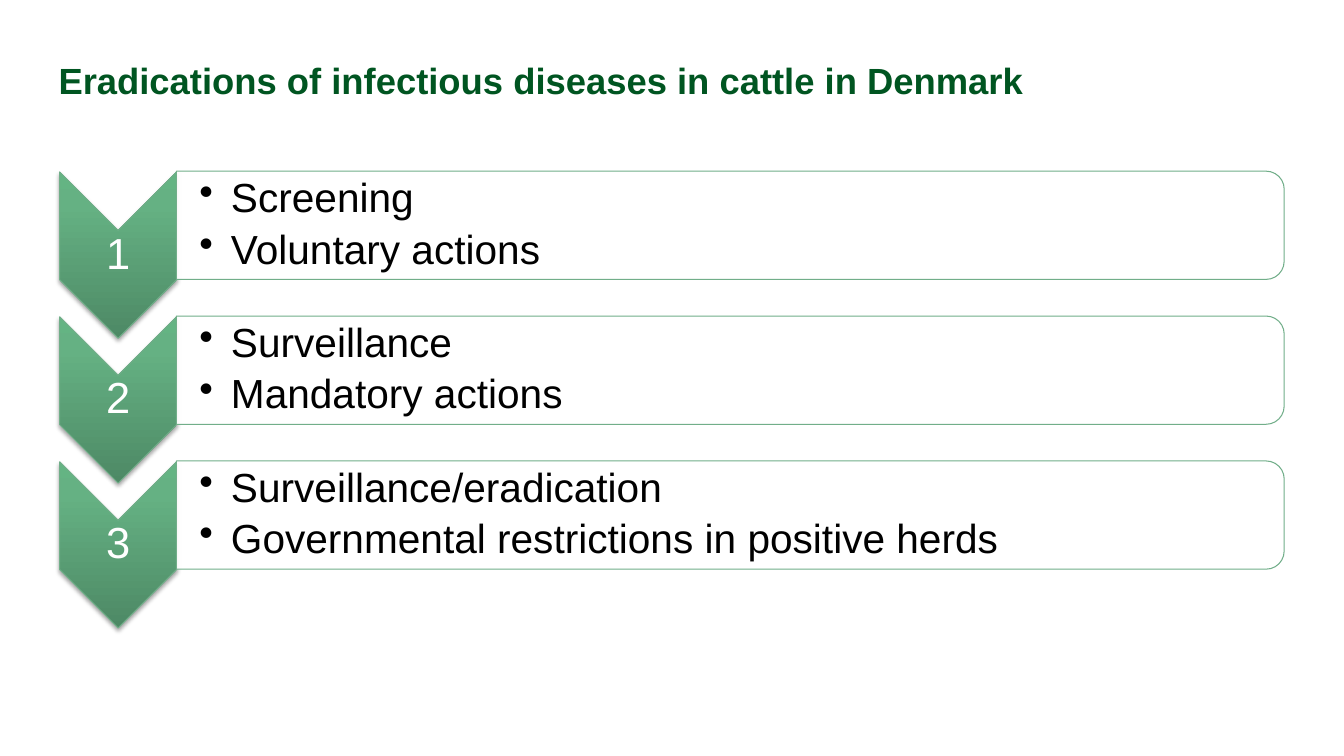
"""Build the slide on the three steps of eradicating cattle diseases in Denmark."""
from dataclasses import dataclass
from lxml.etree import SubElement
from pptx import Presentation
from pptx.dml.color import RGBColor as RGB
from pptx.enum.shapes import MSO_SHAPE as Shape
from pptx.enum.text import MSO_ANCHOR as Anchor, PP_ALIGN as Align
from pptx.oxml import parse_xml
from pptx.oxml.ns import nsdecls, qn
from pptx.util import Pt


@dataclass(frozen=True)
class Theme:
    font: str = "Arial"
    title: str = "005521"
    edge: str = "71AE89"
    white: str = "FFFFFF"
    black: str = "000000"
    stops: tuple = ((0, "4D8965"), (80, "65B183"), (100, "64B483"))
    head: int = 26
    digit: int = 31
    body: int = 29


def write(box, text, size, color, align, after=0, left=0, pad=0):
    frame = box.text_frame
    frame.text = text
    frame.word_wrap = True
    frame.vertical_anchor = Anchor.MIDDLE
    frame.margin_left = Pt(left)
    frame.margin_top = frame.margin_right = frame.margin_bottom = Pt(pad)
    for para in frame.paragraphs:
        para.alignment = align
        para.line_spacing = 0.9
        para.space_after = Pt(after)
        for run in para.runs:
            run.font.name = theme.font
            run.font.size = Pt(size)
            run.font.color.rgb = RGB.from_string(color)
    return frame.paragraphs


def turned(kind, mid_x, mid_y, width, height):
    shape = slide.shapes.add_shape(
        kind, Pt(mid_x - width / 2), Pt(mid_y - height / 2), Pt(width), Pt(height))
    shape.rotation = 90
    shape.line.color.rgb = RGB.from_string(theme.edge)
    shape.line.width = Pt(0.75)
    shape.fill.solid()
    shape.fill.fore_color.rgb = RGB.from_string(theme.white)
    shape.shadow.inherit = False
    return shape


theme = Theme()
steps = [
    ("1", "Screening\nVoluntary actions"),
    ("2", "Surveillance\nMandatory actions"),
    ("3", "Surveillance/eradication\nGovernmental restrictions in positive herds"),
]
pitch = 103.5

deck = Presentation()
deck.slide_width, deck.slide_height = Pt(960), Pt(540)
slide = deck.slides.add_slide(deck.slide_layouts[5])

title = slide.shapes.title
title.left, title.top, title.width, title.height = Pt(41.8), Pt(31), Pt(738.7), Pt(56.2)
head = write(title, "Eradications of infectious diseases in cattle in Denmark",
             theme.head, theme.title, Align.LEFT)
head[0].runs[0].font.bold = True

stops = "".join(f'<a:gs pos="{pos * 1000}"><a:srgbClr val="{color}"/></a:gs>'
                for pos, color in theme.stops)
blend = (f'<a:gradFill {nsdecls("a")} rotWithShape="0"><a:gsLst>{stops}</a:gsLst>'
         '<a:lin ang="16200000" scaled="0"/></a:gradFill>')
shade = (f'<a:outerShdw {nsdecls("a")} blurRad="{Pt(3.1)}" dist="{Pt(1.8)}" '
         f'dir="5400000" rotWithShape="0"><a:srgbClr val="{theme.black}">'
         '<a:alpha val="35000"/></a:srgbClr></a:outerShdw>')

for row, (digit, text) in enumerate(steps):
    down = row * pitch

    arrow = turned(Shape.CHEVRON, 84.4, 182.2 + down, 118.8, 83.5)
    props = arrow.element.spPr
    props.replace(props.find(qn("a:solidFill")), parse_xml(blend))
    props.find(qn("a:effectLst")).append(parse_xml(shade))

    label = slide.shapes.add_textbox(Pt(42.6), Pt(164.2 + down), Pt(83.5), Pt(36))
    write(label, digit, theme.digit, theme.white, Align.CENTER, 13, 1.5, 1.5)

    bar = turned(Shape.ROUND_2_SAME_RECTANGLE, 521.6, 160.9 + down, 77.3, 791.3)
    tint = bar.element.spPr.find(qn("a:solidFill"))[0]
    SubElement(tint, qn("a:alpha")).set("val", "90000")

    note = slide.shapes.add_textbox(Pt(126), Pt(126 + down), Pt(787.7), Pt(69.8))
    for para in write(note, text, theme.body, theme.black, Align.LEFT, 5.3, 16.5, 1.5):
        para.level = 1
        props = para._p.get_or_add_pPr()
        props.set("marL", str(Pt(22.5)))
        props.set("indent", str(Pt(-22.5)))
        SubElement(props, qn("a:buChar")).set("char", "•")

deck.save("out.pptx")
